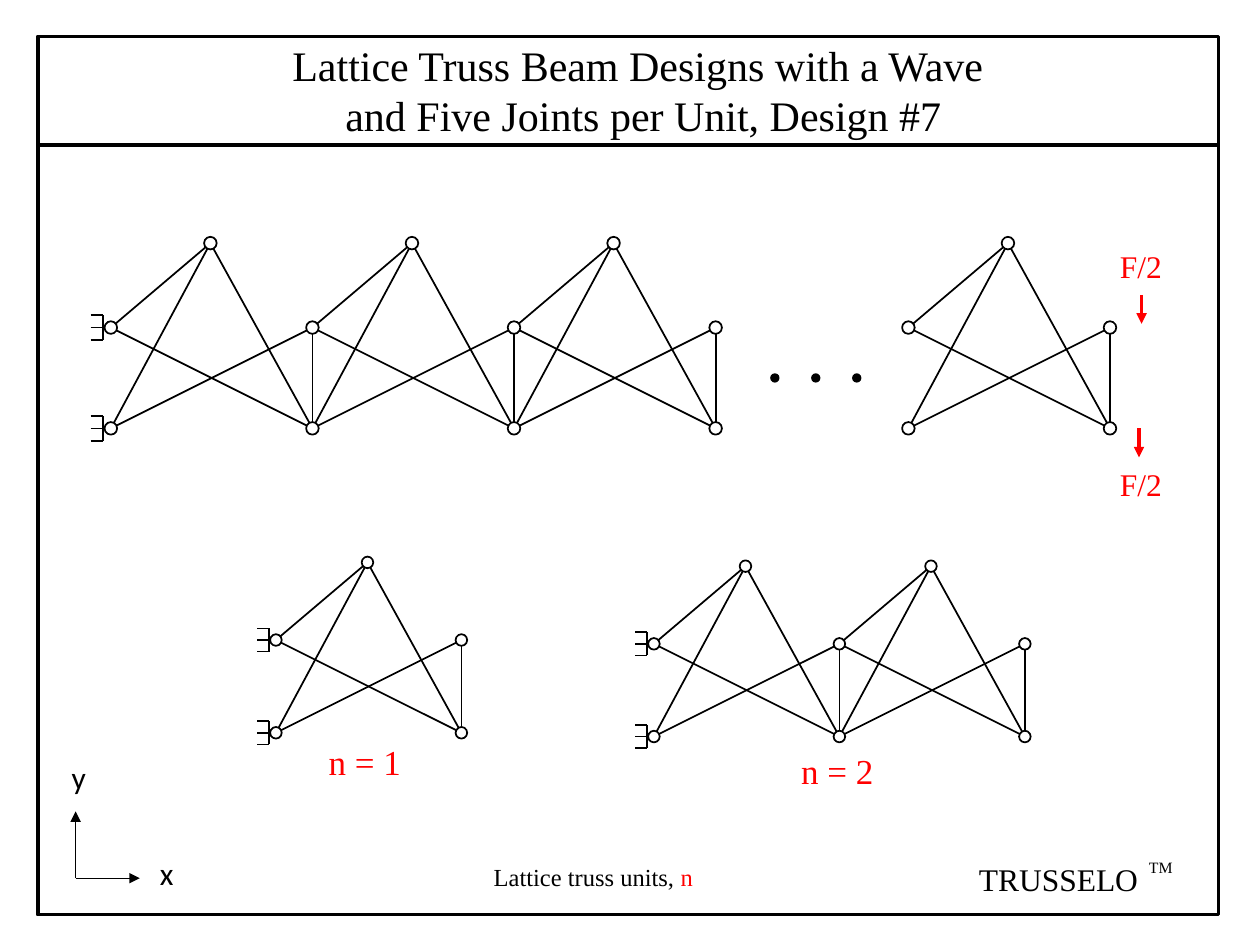
"""Build a slide of lattice truss beams from repeated truss units."""
from dataclasses import dataclass

from lxml import etree
from pptx import Presentation
from pptx.dml.color import RGBColor
from pptx.enum.shapes import MSO_CONNECTOR, MSO_SHAPE
from pptx.enum.text import MSO_ANCHOR, MSO_AUTO_SIZE, PP_ALIGN
from pptx.oxml.ns import qn
from pptx.util import Inches, Length, Pt

LINE = MSO_CONNECTOR.STRAIGHT
OVAL, RECT = MSO_SHAPE.OVAL, MSO_SHAPE.RECTANGLE
LEFT, TOP = PP_ALIGN.LEFT, MSO_ANCHOR.TOP
FIT, FIXED = MSO_AUTO_SIZE.SHAPE_TO_FIT_TEXT, MSO_AUTO_SIZE.NONE
COLS, ROWS = 100, 75
WIDTH, HEIGHT = Inches(10), Inches(7.5)

Point = tuple[float, float]
Run = tuple[str, RGBColor]


@dataclass(frozen=True)
class Theme:
    black: RGBColor = RGBColor(0, 0, 0)
    white: RGBColor = RGBColor(255, 255, 255)
    red: RGBColor = RGBColor(255, 0, 0)
    serif: str = "Times New Roman"
    sans: str = "Calibri"
    title: int = 24
    count: int = 20
    label: int = 18
    note: int = 14
    mark: int = 9
    bold: float = 2
    thin: float = 1
    hair: float = 0.5


@dataclass(frozen=True)
class Truss:
    col: float
    row: float
    units: int
    scale: float = 1
    fixed: bool = True

    def at(self, x: float, y: float) -> Point:
        return self.col + x * self.scale, self.row + y * self.scale


@dataclass(frozen=True)
class Label:
    col: float
    row: float
    wide: float
    high: float
    runs: tuple[Run, ...]
    size: int
    font: str


@dataclass(frozen=True)
class Arrow:
    start: Point
    end: Point
    color: RGBColor
    width: float


T = Theme()
PITCH, DEPTH, NODE = 16, 8, 1
PEAK = (7.9, -6.7)
WALL, TICK = 0.6, 1
TRUSSES = (
    Truss(8.8, 26, 3),
    Truss(72.1, 26, 1, fixed=False),
    Truss(21.9, 50.8, 1, 0.92),
    Truss(51.9, 51.1, 2, 0.92),
)
LABELS = (
    Label(87.9, 19.1, 5.9, 4, (("F/2", T.red),), T.label, T.serif),
    Label(87.9, 36.4, 6, 4, (("F/2", T.red),), T.label, T.serif),
    Label(11.7, 67.3, 3.1, 4, (("x", T.black),), T.label, T.sans),
    Label(4.7, 59.7, 3.1, 4, (("y", T.black),), T.label, T.sans),
    Label(62.6, 59, 10.4, 4.4, (("n = 2", T.red),), T.count, T.serif),
    Label(25.1, 58.3, 8.8, 4.4, (("n = 1", T.red),), T.count, T.serif),
    Label(38.2, 67.9, 18.5, 3.4, (("Lattice truss units, ", T.black), ("n", T.red)), T.note, T.serif),
    Label(76.7, 67.8, 15.2, 4, (("TRUSSELO", T.black),), T.label, T.serif),
    Label(90.2, 67.6, 5.1, 4, (("TM", T.black),), T.mark, T.serif),
)
ARROWS = (
    Arrow((6, 69.7), (11.1, 69.7), T.black, T.hair),
    Arrow((6, 69.7), (6, 64.4), T.black, T.hair),
    Arrow((90.6, 23.4), (90.6, 25.7), T.red, T.bold),
    Arrow((90.4, 34), (90.4, 36.3), T.red, T.bold),
)


def across(col: float) -> Length:
    return Length(round(WIDTH * col / COLS))


def down(row: float) -> Length:
    return Length(round(HEIGHT * row / ROWS))


def box(col: float, row: float, wide: float, high: float) -> tuple[Length, ...]:
    return across(col), down(row), across(wide), down(high)


def bar(slide, start: Point, end: Point, color=T.black, width=T.thin, head=False) -> None:
    line = slide.shapes.add_connector(
        LINE, across(start[0]), down(start[1]), across(end[0]), down(end[1]))
    line.line.color.rgb = color
    line.line.width = Pt(width)
    if head:
        etree.SubElement(line.line._get_or_add_ln(), qn("a:tailEnd"), type="triangle")
    etree.SubElement(line._element.spPr, qn("a:effectLst"))


def dot(slide, mid: Point, size: float, fill: RGBColor) -> None:
    disc = slide.shapes.add_shape(
        OVAL, *box(mid[0] - size / 2, mid[1] - size / 2, size, size))
    disc.shadow.inherit = False
    disc.fill.solid()
    disc.fill.fore_color.rgb = fill
    disc.line.color.rgb = T.black
    disc.line.width = Pt(T.thin)


def wall(slide, truss: Truss, y: float) -> None:
    bar(slide, truss.at(-WALL, y - TICK), truss.at(-WALL, y + TICK))
    for step in (-TICK, 0, TICK):
        bar(slide, truss.at(-WALL - TICK, y + step), truss.at(-WALL, y + step))


def draw(slide, truss: Truss) -> None:
    nodes = [truss.at(0, 0), truss.at(0, DEPTH)]
    for unit in range(truss.units):
        x = unit * PITCH
        high, low = nodes[-2:]
        peak = truss.at(x + PEAK[0], PEAK[1])
        top, base = truss.at(x + PITCH, 0), truss.at(x + PITCH, DEPTH)
        for start, end in ((high, peak), (low, peak), (peak, base),
                           (high, base), (low, top), (top, base)):
            bar(slide, start, end)
        nodes += [peak, top, base]
    if truss.fixed:
        for y in (0, DEPTH):
            wall(slide, truss, y)
    for node in nodes:
        dot(slide, node, NODE * truss.scale, T.white)


def write(slide, label: Label) -> None:
    frame = slide.shapes.add_textbox(
        *box(label.col, label.row, label.wide, label.high)).text_frame
    frame.word_wrap = True
    frame.auto_size = FIT
    para = frame.paragraphs[0]
    para.font.size = Pt(label.size)
    para.font.name = label.font
    for text, color in label.runs:
        run = para.add_run()
        run.text = text
        run.font.color.rgb = color


def head(slide) -> None:
    title = slide.shapes.title
    title.left, title.top, title.width, title.height = box(22.2, 2.6, 58.8, 9.1)
    frame = title.text_frame
    frame.text = "Lattice Truss Beam Designs with a Wave\nand Five Joints per Unit, Design #7"
    frame.auto_size = FIXED
    frame.vertical_anchor = TOP
    for para in frame.paragraphs:
        para.alignment = LEFT
        para.font.size = Pt(T.title)
        para.font.name = T.serif
        para.font.color.rgb = T.black
    frame.paragraphs[1]._p.get_or_add_pPr().set("marL", str(across(4.2)))


def border(slide) -> None:
    rect = slide.shapes.add_shape(RECT, *box(3, 2.9, 93.7, 69.7))
    rect.shadow.inherit = False
    rect.fill.background()
    rect.line.color.rgb = T.black
    rect.line.width = Pt(T.bold)
    bar(slide, (3, 11.5), (96.7, 11.5), width=T.bold)


def main() -> None:
    deck = Presentation()
    deck.slide_width, deck.slide_height = WIDTH, HEIGHT
    slide = deck.slides.add_slide(deck.slide_layouts.get_by_name("Title Only"))
    head(slide)
    border(slide)
    for truss in TRUSSES:
        draw(slide, truss)
    for step in range(3):
        dot(slide, (61.5 + step * 3.25, 30), 0.6, T.black)
    for arrow in ARROWS:
        bar(slide, arrow.start, arrow.end, arrow.color, arrow.width, head=True)
    for label in LABELS:
        write(slide, label)
    deck.save("out.pptx")


if __name__ == "__main__":
    main()
